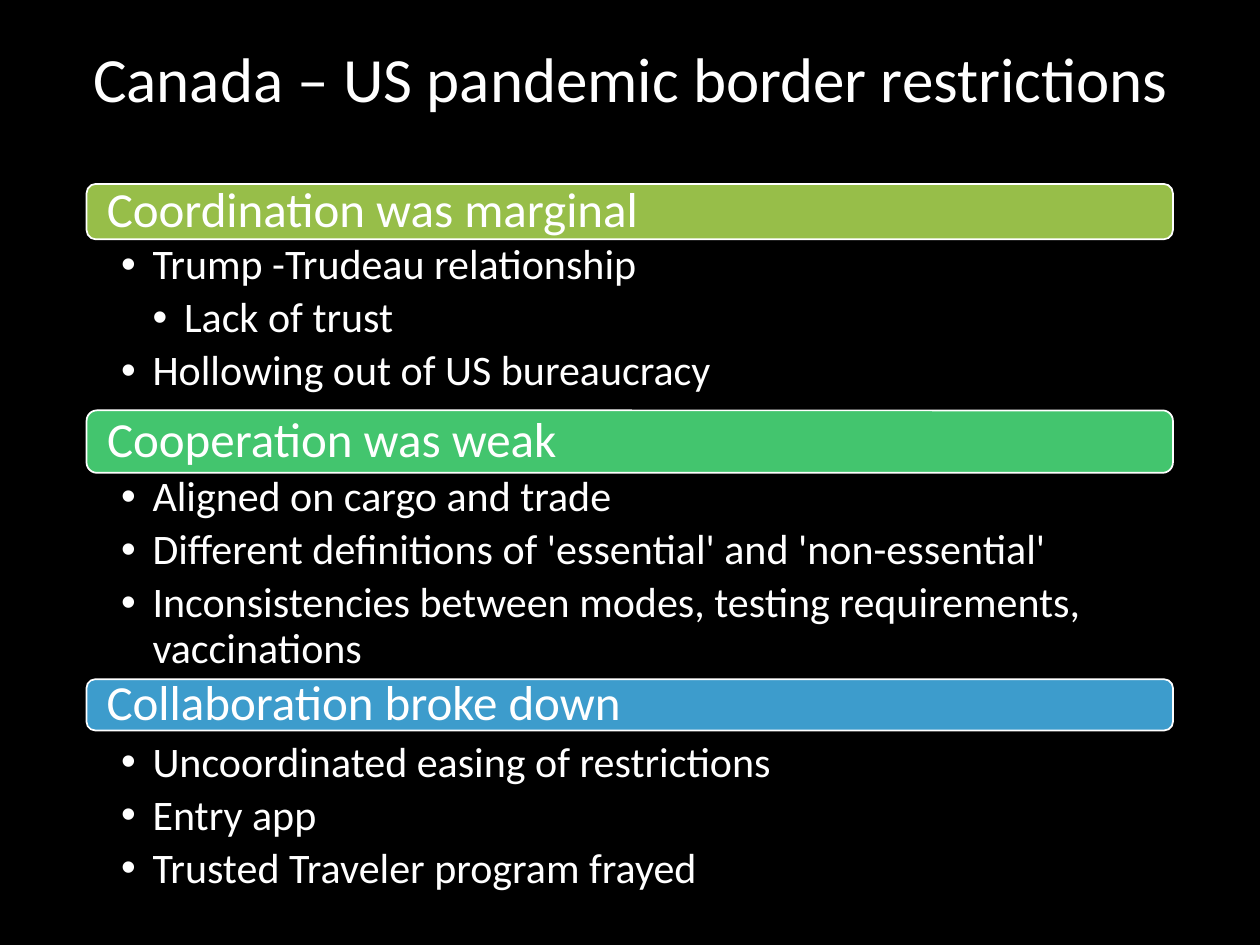
from lxml import etree
from pptx import Presentation
from pptx.dml.color import RGBColor
from pptx.enum.shapes import MSO_SHAPE as Shape
from pptx.enum.text import MSO_ANCHOR as Anchor, PP_ALIGN as Align
from pptx.oxml.ns import qn
from pptx.util import Pt

COLORS = {"back": "000000", "text": "FFFFFF", "green": "97BE49",
          "emerald": "43C56E", "blue": "3D9CCC"}
FONT = "Calibri"
LEFT, WIDTH = 49.5, 620.8
INDENT = 18

SECTIONS = [
    ("Coordination was marginal", "green", (105.1, 31.7), (136.8, 96.5),
     [(1, "Trump -Trudeau relationship"), (2, "Lack of trust"),
      (1, "Hollowing out of US bureaucracy")]),
    ("Cooperation was weak", "emerald", (234.5, 35.7), (269.3, 122.4),
     [(1, "Aligned on cargo and trade"),
      (1, "Different definitions of 'essential' and 'non-essential'"),
      (1, "Inconsistencies between modes, testing requirements, vaccinations")]),
    ("Collaboration broke down", "blue", (388.2, 29.2), (421.2, 96.5),
     [(1, "Uncoordinated easing of restrictions"), (1, "Entry app"),
      (1, "Trusted Traveler program frayed")]),
]


def color(name):
    """Return the named colour."""
    return RGBColor.from_string(COLORS[name])


def set_frame(frame, anchor, left=0, top=0, right=0, bottom=0):
    """Set wrapping, anchor and insets of a text frame."""
    frame.word_wrap = True
    frame.vertical_anchor = anchor
    frame.margin_left, frame.margin_top = Pt(left), Pt(top)
    frame.margin_right, frame.margin_bottom = Pt(right), Pt(bottom)


def add_span(para, text, size, align=Align.LEFT):
    """Write one run into a paragraph."""
    para.alignment = align
    para.line_spacing = 0.9
    span = para.add_run()
    span.text = text
    span.font.size = Pt(size)
    span.font.name = FONT
    span.font.color.rgb = color("text")


def add_title(page, text, left, top, width, height):
    """Place the centred slide title."""
    box = page.shapes.add_textbox(Pt(left), Pt(top), Pt(width), Pt(height))
    set_frame(box.text_frame, Anchor.TOP)
    add_span(box.text_frame.paragraphs[0], text, 36, Align.CENTER)


def add_header(page, text, fill, left, top, width, height):
    """Place a rounded section bar with its heading."""
    bar = page.shapes.add_shape(Shape.ROUNDED_RECTANGLE, Pt(left), Pt(top),
                                Pt(width), Pt(height))
    bar.shadow.inherit = False
    bar.fill.solid()
    bar.fill.fore_color.rgb = color(fill)
    bar.line.color.rgb = color("text")
    bar.line.width = Pt(1)
    set_frame(bar.text_frame, Anchor.MIDDLE, left=10)
    add_span(bar.text_frame.paragraphs[0], text, 28)


def add_bullets(page, items, left, top, width, height):
    """Place a bulleted list of (level, text) items."""
    box = page.shapes.add_textbox(Pt(left), Pt(top), Pt(width), Pt(height))
    frame = box.text_frame
    set_frame(frame, Anchor.TOP, left=19.7, top=2.4, right=13.7, bottom=2.4)
    for index, (level, text) in enumerate(items):
        para = frame.add_paragraph() if index else frame.paragraphs[0]
        para.level = level
        para.space_after = Pt(4.4)
        props = para._p.get_or_add_pPr()
        props.set("marL", str(Pt(INDENT * level)))
        props.set("indent", str(Pt(-INDENT)))
        etree.SubElement(props, qn("a:buFont")).set("typeface", "Arial")
        etree.SubElement(props, qn("a:buChar")).set("char", "•")
        add_span(para, text, 24)


def main():
    """Build the slide and save the deck."""
    deck = Presentation()
    deck.slide_width, deck.slide_height = Pt(720), Pt(540)
    page = deck.slides.add_slide(deck.slide_layouts[6])
    page.background.fill.solid()
    page.background.fill.fore_color.rgb = color("back")
    add_title(page, "Canada – US pandemic border restrictions", 6.5, 27.5, 707.8, 62.6)
    for heading, fill, (bar_top, bar_height), (list_top, list_height), items in SECTIONS:
        add_header(page, heading, fill, LEFT, bar_top, WIDTH, bar_height)
        add_bullets(page, items, LEFT, list_top, WIDTH, list_height)
    deck.save("out.pptx")


if __name__ == "__main__":
    main()
